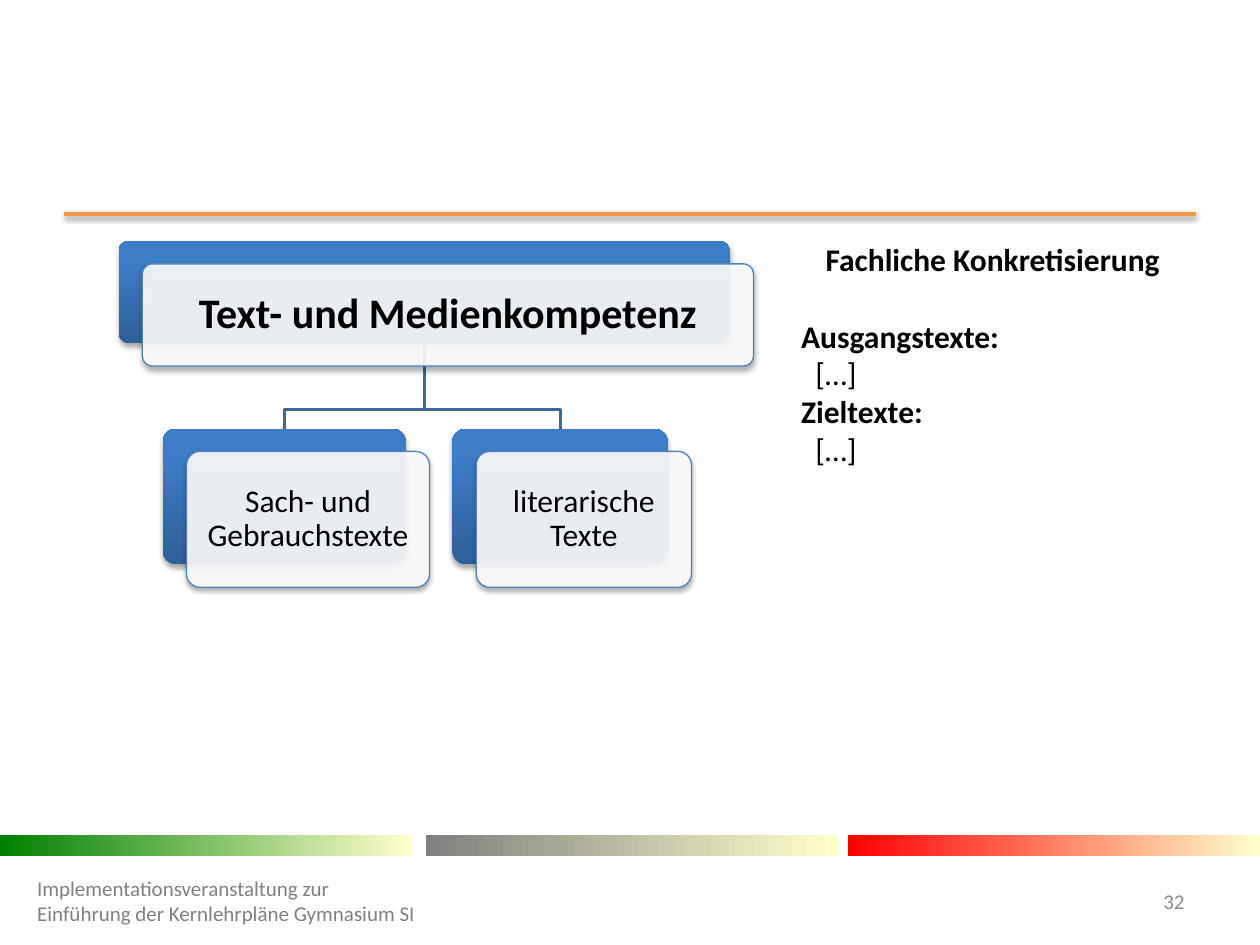
from lxml.etree import SubElement
from pptx import Presentation
from pptx.dml.color import RGBColor
from pptx.enum.shapes import MSO_CONNECTOR, MSO_SHAPE
from pptx.enum.text import MSO_ANCHOR as ANCHOR, PP_ALIGN as ALIGN
from pptx.oxml.ns import qn
from pptx.util import Cm, Pt

COLORS = {
    "rule": "F79646", "green": "008000", "grey": "808080", "red": "FF0000",
    "cream": "FFFFCC", "branch": "3F6797", "card_low": "2F5F99",
    "card_high": "3D7CC7", "edge": "4F81BD", "white": "FFFFFF",
    "text": "000000", "number": "8C8C8C",
}


def rgb(name):
    return RGBColor.from_string(COLORS[name])


class SlideBuilder:
    """Draws styled elements on the current slide."""

    font = "Calibri"
    card_offset = (0.48, 0.46)

    def __init__(self, prs):
        self.slide = prs.slides.add_slide(prs.slide_layouts[6])
        self.shapes = self.slide.shapes

    def shadow(self, s, alpha=35, dist=1.8):
        spPr = s._element.spPr
        effects = spPr.find(qn("a:effectLst"))
        if effects is None:
            effects = SubElement(spPr, qn("a:effectLst"))
        outer = SubElement(effects, qn("a:outerShdw"), blurRad=str(Pt(3.1)),
                           dist=str(Pt(dist)), dir="5400000", rotWithShape="0")
        color = SubElement(outer, qn("a:srgbClr"), val=COLORS["text"])
        SubElement(color, qn("a:alpha"), val=str(alpha * 1000))

    def rule(self, x1, x2, y):
        s = self.shapes.add_connector(MSO_CONNECTOR.STRAIGHT, Cm(x1), Cm(y), Cm(x2), Cm(y))
        s.line.color.rgb = rgb("rule")
        s.line.width = Pt(2)
        self.shadow(s, 38, 1.6)

    def box(self, kind, x, y, w, h):
        s = self.shapes.add_shape(kind, Cm(x), Cm(y), Cm(w), Cm(h))
        s.shadow.inherit = False
        s.line.fill.background()
        if kind == MSO_SHAPE.ROUNDED_RECTANGLE:
            s.adjustments[0] = 0.1
        return s

    def gradient(self, s, start, end, angle, end_pos=1):
        s.fill.gradient()
        s.fill.gradient_angle = angle
        for stop, name, pos in zip(s.fill.gradient_stops, (start, end), (0, end_pos)):
            stop.color.rgb = rgb(name)
            stop.position = pos

    def bar(self, x, color):
        s = self.box(MSO_SHAPE.RECTANGLE, x, 16.84, 8.31, 0.41)
        self.gradient(s, color, "cream", 0)

    def branch(self, points):
        (x, y), *rest = [(Cm(px), Cm(py)) for px, py in points]
        fb = self.shapes.build_freeform(x, y)
        fb.add_line_segments(rest, close=False)
        s = fb.convert_to_shape()
        s.shadow.inherit = False
        s.fill.background()
        s.line.color.rgb = rgb("branch")
        s.line.width = Pt(2)

    def style(self, p, size, color="text", bold=False, align=ALIGN.LEFT):
        p.alignment = align
        for r in p.runs:
            r.font.name = self.font
            r.font.size = Pt(size)
            r.font.bold = bold
            r.font.color.rgb = rgb(color)

    def card(self, x, y, w, h, text, size, inset, bold=False):
        back = self.box(MSO_SHAPE.ROUNDED_RECTANGLE, x, y, w, h)
        self.gradient(back, "card_low", "card_high", 90, 0.8)
        self.shadow(back)
        dx, dy = self.card_offset
        s = self.box(MSO_SHAPE.ROUNDED_RECTANGLE, x + dx, y + dy, w, h)
        s.fill.solid()
        s.fill.fore_color.rgb = rgb("white")
        SubElement(s._element.spPr.find(qn("a:solidFill"))[0], qn("a:alpha"), val="90000")
        s.line.color.rgb = rgb("edge")
        s.line.width = Pt(0.75)
        self.shadow(s)
        tf = s.text_frame
        tf.word_wrap = True
        tf.vertical_anchor = ANCHOR.MIDDLE
        tf.margin_left = tf.margin_right = tf.margin_top = tf.margin_bottom = Cm(inset)
        tf.text = text
        p = tf.paragraphs[0]
        p.line_spacing = 0.9
        self.style(p, size, bold=bold, align=ALIGN.CENTER)

    def text_box(self, x, y, w, h, text, anchor=ANCHOR.TOP):
        tf = self.shapes.add_textbox(Cm(x), Cm(y), Cm(w), Cm(h)).text_frame
        tf.word_wrap = True
        tf.vertical_anchor = anchor
        tf.text = text
        return tf

    def details(self, x, y, w, h, heading, items):
        tf = self.text_box(x, y, w, h, heading)
        self.style(tf.paragraphs[0], 18, bold=True, align=ALIGN.CENTER)
        for i, (label, value) in enumerate(items):
            p = tf.add_paragraph()
            p.text = label
            if i == 0:
                p.space_before = Pt(22)
            self.style(p, 18, bold=True)
            p = tf.add_paragraph()
            p.text = value
            p._p.get_or_add_pPr().set("marL", str(Cm(0.29)))
            self.style(p, 18)

    def footer(self, x, w, text, color, align=ALIGN.LEFT):
        tf = self.text_box(x, 17.65, w, 1.02, text, ANCHOR.MIDDLE)
        self.style(tf.paragraphs[0], 12, color, align=align)


def main():
    prs = Presentation()
    prs.slide_width, prs.slide_height = Cm(25.4), Cm(19.05)
    b = SlideBuilder(prs)
    b.rule(1.3, 24.1, 4.31)
    for x, color in ((0, "green"), (8.59, "grey"), (17.09, "red")):
        b.bar(x, color)
    for x in (11.3, 5.74):
        b.branch([(8.56, 6.91), (8.56, 8.26), (x, 8.26), (x, 8.64)])
    b.card(2.39, 4.86, 12.32, 2.06, "Text- und Medienkompetenz", 24, 0.25, bold=True)
    for x, w, text in ((3.28, 4.9, "Sach- und Gebrauchstexte"),
                       (9.12, 4.34, "literarische Texte")):
        b.card(x, 8.64, w, 2.74, text, 18, 0.18)
    b.details(15.9, 4.72, 8.23, 4.88, "Fachliche Konkretisierung",
              [("Ausgangstexte:", "[…]"), ("Zieltexte:", "[…]")])
    b.footer(0.5, 8.23, "Implementationsveranstaltung zur Einführung der "
             "Kernlehrpläne Gymnasium SI", "grey")
    b.footer(22.5, 1.63, "32", "number", ALIGN.RIGHT)
    prs.save("out.pptx")


if __name__ == "__main__":
    main()
